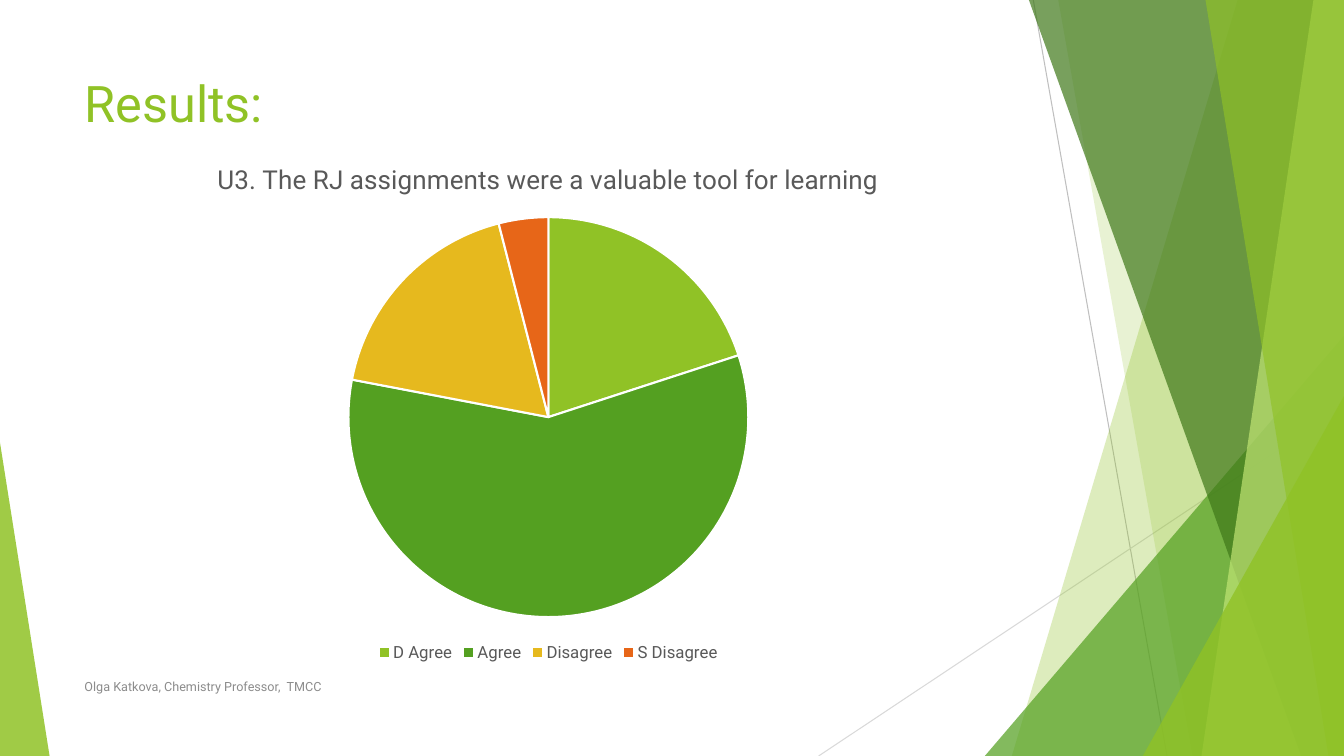
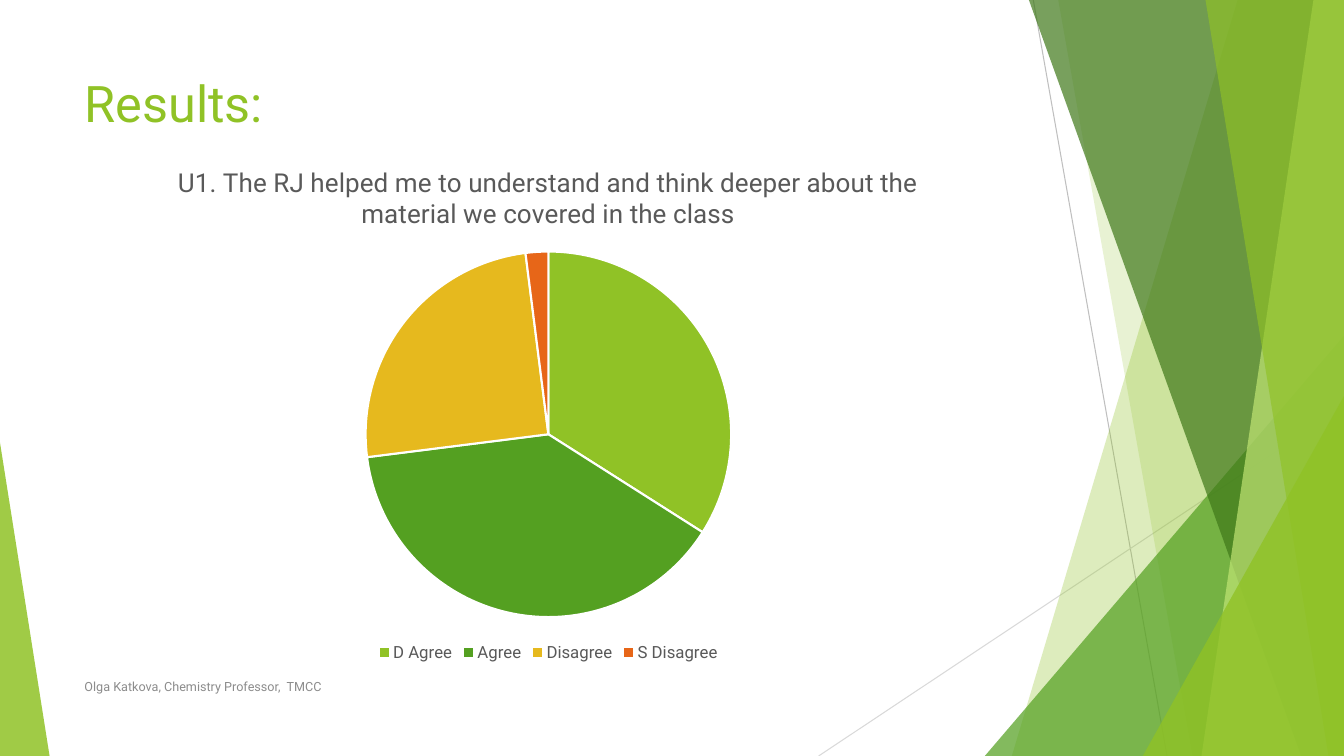
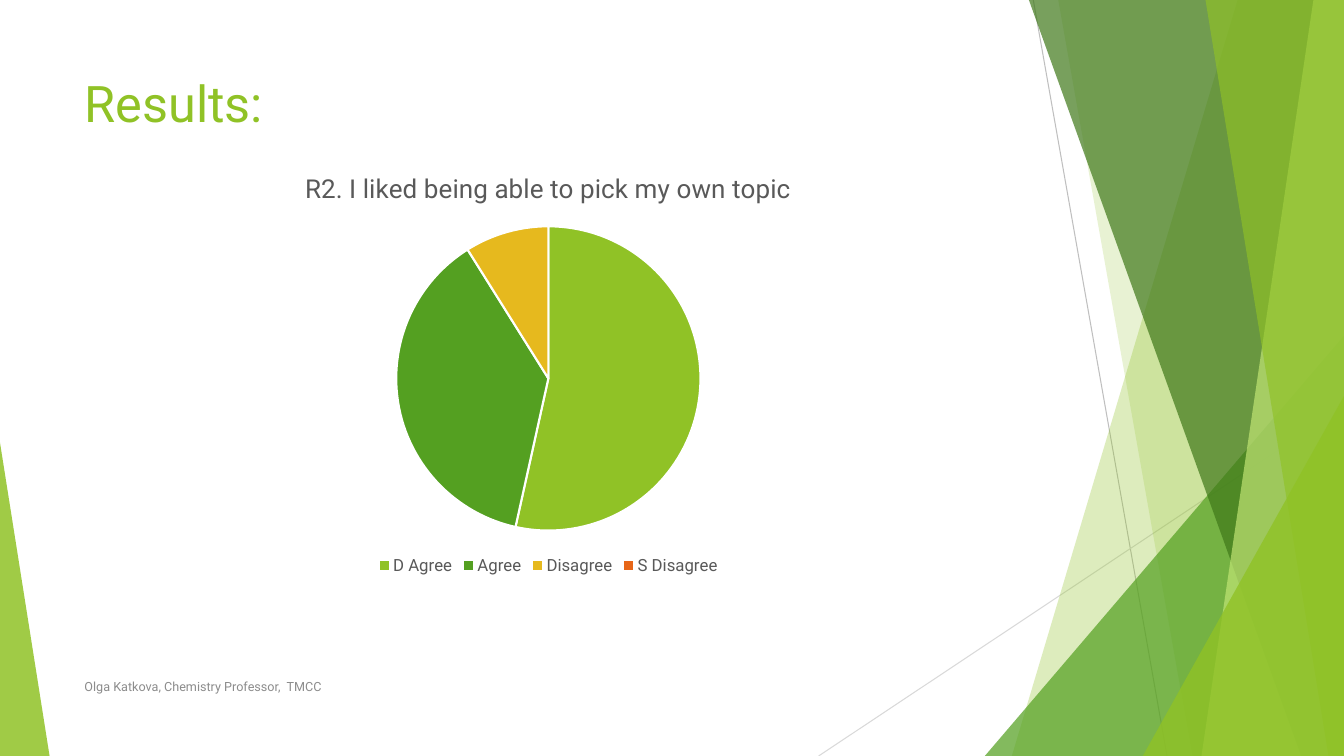
from dataclasses import dataclass

from lxml.etree import SubElement
from pptx import Presentation
from pptx.chart.data import CategoryChartData
from pptx.dml.color import RGBColor as RGB
from pptx.enum.chart import XL_CHART_TYPE as ChartType, XL_LEGEND_POSITION as LegendPos
from pptx.enum.shapes import MSO_CONNECTOR as Connector, MSO_SHAPE as Shape
from pptx.enum.text import MSO_ANCHOR as Anchor
from pptx.oxml.ns import qn
from pptx.util import Cm, Pt


@dataclass(frozen=True)
class Theme:
    font: str = "Roboto"
    lime: str = "90C226"
    green: str = "54A021"
    forest: str = "3F7819"
    pale: str = "C0E474"
    gold: str = "E6B91E"
    orange: str = "E76618"
    white: str = "FFFFFF"
    chart_text: str = "595959"
    footer_text: str = "8C8C8C"
    dark_rule: str = "BFBFBF"
    light_rule: str = "D9D9D9"
    title_size: float = 36
    chart_title_size: float = 18.6
    legend_size: float = 12
    chart_size: float = 10
    footer_size: float = 9
    rule_width: float = 0.75
    slice_gap: float = 1.5


WIDTH, HEIGHT = 33.87, 19.05
LEFT, CONTENT_WIDTH = 1.88, 23.88
TITLE_TOP, FOOTER_TOP = 1.7, 16.79
FOOTER = "Olga Katkova, Chemistry Professor,  TMCC"
ANSWERS = ("D Agree", "Agree", "Disagree", "S Disagree")
U1 = "U1. The RJ helped me to understand and think deeper about the material we covered in the class"

# chart title, series name, values, chart top, chart height
RESULTS = (
    ("U3. The RJ assignments were a valuable tool for learning", "Series 1",
     (20, 58, 18, 4), 3.56, 13.23),
    (U1, U1, (34, 39, 25, 2), 3.66, 13.13),
    ("R2. I liked being able to pick my own topic", "Series 1",
     (54, 38, 9, 0), 3.84, 10.77),
)


class Deck:
    def __init__(self, theme):
        self.theme = theme
        self.prs = Presentation()
        self.prs.slide_width, self.prs.slide_height = Cm(WIDTH), Cm(HEIGHT)
        self.slide = None

    def add_slide(self):
        self.slide = self.prs.slides.add_slide(self.prs.slide_layouts[6])
        self.facets()

    def style_font(self, font, size, color):
        font.name, font.size, font.bold = self.theme.font, Pt(size), False
        font.color.rgb = RGB.from_string(color)

    def rule(self, x1, y1, x2, y2, color):
        line = self.slide.shapes.add_connector(
            Connector.STRAIGHT, Cm(x1), Cm(y1), Cm(x2), Cm(y2))
        line.line.color.rgb = RGB.from_string(color)
        line.line.width = Pt(self.theme.rule_width)
        SubElement(line.element.spPr, qn("a:effectLst"))

    def tint(self, sp, color, opacity):
        """Fill with a see-through colour, without outline or shadow."""
        sp.fill.solid()
        sp.fill.fore_color.rgb = RGB.from_string(color)
        clr = sp.element.spPr.find(qn("a:solidFill"))[0]
        SubElement(clr, qn("a:alpha"), val=str(opacity * 1000))
        sp.line.fill.background()
        sp.shadow.inherit = False

    def band(self, top_x, bottom_x, color, opacity):
        """Full-height band from a slanted left edge to the right slide edge."""
        builder = self.slide.shapes.build_freeform(Cm(top_x), 0)
        corners = ((WIDTH, 0), (WIDTH, HEIGHT), (bottom_x, HEIGHT))
        builder.add_line_segments([(Cm(x), Cm(y)) for x, y in corners])
        self.tint(builder.convert_to_shape(), color, opacity)

    def corner(self, left, right, top, apex, color, opacity):
        """Triangle standing on the bottom edge; apex is 0 (left) to 1 (right)."""
        sp = self.slide.shapes.add_shape(
            Shape.ISOSCELES_TRIANGLE, Cm(left), Cm(top), Cm(right - left), Cm(HEIGHT - top))
        sp.adjustments[0] = apex
        self.tint(sp, color, opacity)

    def facets(self):
        t = self.theme
        self.rule(26.04, 0, 29.41, HEIGHT, t.dark_rule)
        self.rule(WIDTH, 10.24, 20.63, HEIGHT, t.light_rule)
        self.band(31.19, 25.5, t.lime, 30)
        self.band(26.67, 30.05, t.lime, 20)
        self.corner(24.82, WIDTH, 8.46, 1, t.green, 72)
        self.band(25.93, 32.79, t.forest, 70)
        self.band(33.1, 30.28, t.pale, 70)
        self.band(30.38, 33.48, t.lime, 65)
        self.corner(28.8, WIDTH, 9.98, 1, t.lime, 80)
        self.corner(0, 1.25, 11.15, 0, t.lime, 85)

    def text(self, text, top, width, height, size, color, anchor=Anchor.TOP):
        sp = self.slide.shapes.add_textbox(Cm(LEFT), Cm(top), Cm(width), Cm(height))
        tf = sp.text_frame
        tf.word_wrap, tf.vertical_anchor = True, anchor
        p = tf.paragraphs[0]
        p.text = text
        self.style_font(p.font, size, color)

    def title(self, text):
        self.text(text, TITLE_TOP, CONTENT_WIDTH, 1.86,
                  self.theme.title_size, self.theme.lime)

    def footer(self, text):
        self.text(text, FOOTER_TOP, 17.5, 1.02,
                  self.theme.footer_size, self.theme.footer_text, Anchor.MIDDLE)

    def pie(self, title, series_name, values, top, height):
        t = self.theme
        data = CategoryChartData()
        data.categories = ANSWERS
        data.add_series(series_name, values)
        chart = self.slide.shapes.add_chart(
            ChartType.PIE, Cm(LEFT), Cm(top), Cm(CONTENT_WIDTH), Cm(height), data).chart
        self.style_font(chart.font, t.chart_size, t.chart_text)

        chart.has_title = True
        tf = chart.chart_title.text_frame
        tf.text = title
        self.style_font(tf.paragraphs[0].font, t.chart_title_size, t.chart_text)
        chart.chart_title.include_in_layout = False

        chart.has_legend = True
        chart.legend.position = LegendPos.BOTTOM
        chart.legend.include_in_layout = False
        self.style_font(chart.legend.font, t.legend_size, t.chart_text)

        plot = chart.plots[0]
        plot.vary_by_categories = True
        for i, color in enumerate((t.lime, t.green, t.gold, t.orange)):
            fmt = plot.series[0].points[i].format
            fmt.fill.solid()
            fmt.fill.fore_color.rgb = RGB.from_string(color)
            fmt.line.color.rgb = RGB.from_string(t.white)
            fmt.line.width = Pt(t.slice_gap)


def main():
    deck = Deck(Theme())
    for result in RESULTS:
        deck.add_slide()
        deck.title("Results:")
        deck.pie(*result)
        deck.footer(FOOTER)
    deck.prs.save("out.pptx")


if __name__ == "__main__":
    main()
